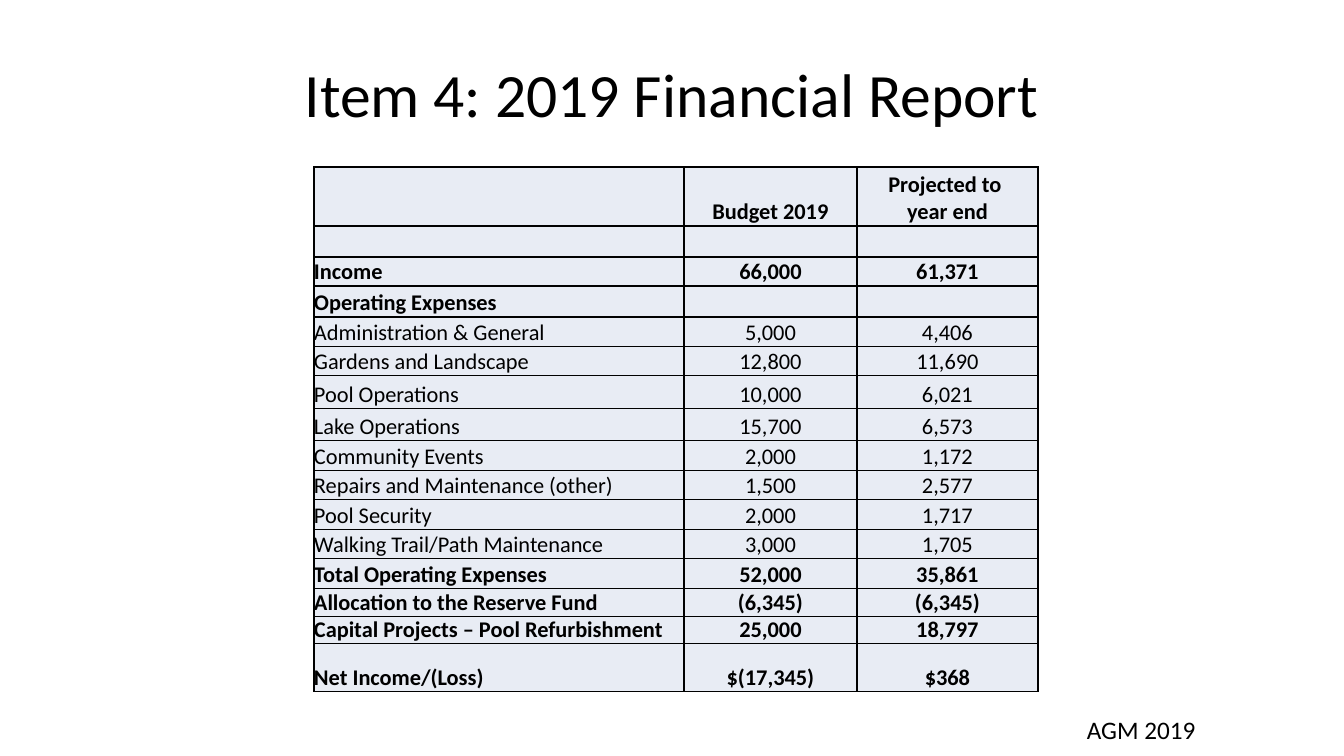
from dataclasses import dataclass

from lxml.etree import SubElement
from pptx import Presentation
from pptx.dml.color import RGBColor as Color
from pptx.enum.text import MSO_ANCHOR as Anchor, PP_ALIGN as Align
from pptx.oxml.ns import qn
from pptx.util import Emu, Pt


@dataclass(frozen=True)
class Theme:
    font: str = "Calibri"
    ink: str = "000000"
    cell: str = "E8ECF4"
    title: int = 44
    body: int = 16
    footer: int = 18
    border: int = 1


def px(count):
    return Emu(round(count * 914400 / 100.8))


class SlideBuilder:
    def __init__(self, page, theme):
        self.page = page
        self.theme = theme

    def style(self, para, size, bold=False, align=Align.LEFT):
        para.alignment = align
        for span in para.runs:
            span.font.name = self.theme.font
            span.font.size = Pt(size)
            span.font.bold = bold
            span.font.color.rgb = Color.from_string(self.theme.ink)

    def text(self, content, left, top, width, height, size, align=Align.LEFT, anchor=Anchor.TOP):
        box = self.page.shapes.add_textbox(px(left), px(top), px(width), px(height))
        frame = box.text_frame
        frame.word_wrap = True
        frame.vertical_anchor = anchor
        frame.text = content
        self.style(frame.paragraphs[0], size, align=align)

    def border(self, cell):
        properties = cell._tc.get_or_add_tcPr()
        for index, side in enumerate(("lnL", "lnR", "lnT", "lnB")):
            line = SubElement(properties, qn(f"a:{side}"), w=str(Pt(self.theme.border)))
            fill = SubElement(line, qn("a:solidFill"))
            SubElement(fill, qn("a:srgbClr"), val=self.theme.ink)
            properties.insert(index, line)

    def cell(self, cell, content, bold, align):
        cell.margin_left = cell.margin_right = cell.margin_top = cell.margin_bottom = 0
        cell.vertical_anchor = Anchor.BOTTOM
        cell.fill.solid()
        cell.fill.fore_color.rgb = Color.from_string(self.theme.cell)
        self.border(cell)
        cell.text = content
        for para in cell.text_frame.paragraphs:
            self.style(para, self.theme.body, bold, align)
            if not content:
                SubElement(para._p, qn("a:endParaRPr"), sz=str(self.theme.body * 100))

    def table(self, rows, left, top, widths, heights, bold_rows):
        frame = self.page.shapes.add_table(
            len(rows), len(widths), px(left), px(top), px(sum(widths)), px(sum(heights))
        )
        table = frame.table
        table.first_row = table.horz_banding = False
        for column, width in zip(table.columns, widths):
            column.width = px(width)
        for row, height in zip(table.rows, heights):
            row.height = px(height)
        for row_index, values in enumerate(rows):
            for column_index, content in enumerate(values):
                align = Align.CENTER if column_index else Align.LEFT
                self.cell(table.cell(row_index, column_index), content, row_index in bold_rows, align)


REPORT = [
    ("", "Budget 2019", "Projected to \nyear end"),
    ("", "", ""),
    ("Income", "66,000", "61,371"),
    ("Operating Expenses", "", ""),
    ("Administration & General", "5,000", "4,406"),
    ("Gardens and Landscape", "12,800", "11,690"),
    ("Pool Operations", "10,000", "6,021"),
    ("Lake Operations", "15,700", "6,573"),
    ("Community Events", "2,000", "1,172"),
    ("Repairs and Maintenance (other)", "1,500", "2,577"),
    ("Pool Security", "2,000", "1,717"),
    ("Walking Trail/Path Maintenance", "3,000", "1,705"),
    ("Total Operating Expenses", "52,000", "35,861"),
    ("Allocation to the Reserve Fund", "(6,345)", "(6,345)"),
    ("Capital Projects – Pool Refurbishment", "25,000", "18,797"),
    ("Net Income/(Loss)", "$(17,345)", "$368"),
]
COLUMN_WIDTHS = [370, 173, 181]
ROW_HEIGHTS = [59, 31, 29, 31, 30, 29, 33, 32, 30, 29, 30, 29, 30, 28, 27, 48]
BOLD_ROWS = {0, 2, 3, 12, 13, 14, 15}


def main():
    deck = Presentation()
    deck.slide_width, deck.slide_height = px(1344), px(756)
    theme = Theme()
    builder = SlideBuilder(deck.slides.add_slide(deck.slide_layouts[6]), theme)
    builder.text("Item 4: 2019 Financial Report", 67, 30, 1210, 126, theme.title, Align.CENTER, Anchor.MIDDLE)
    builder.table(REPORT, 314, 167, COLUMN_WIDTHS, ROW_HEIGHTS, BOLD_ROWS)
    builder.text("AGM 2019", 1077, 709, 137, 40, theme.footer)
    deck.save("out.pptx")


if __name__ == "__main__":
    main()
